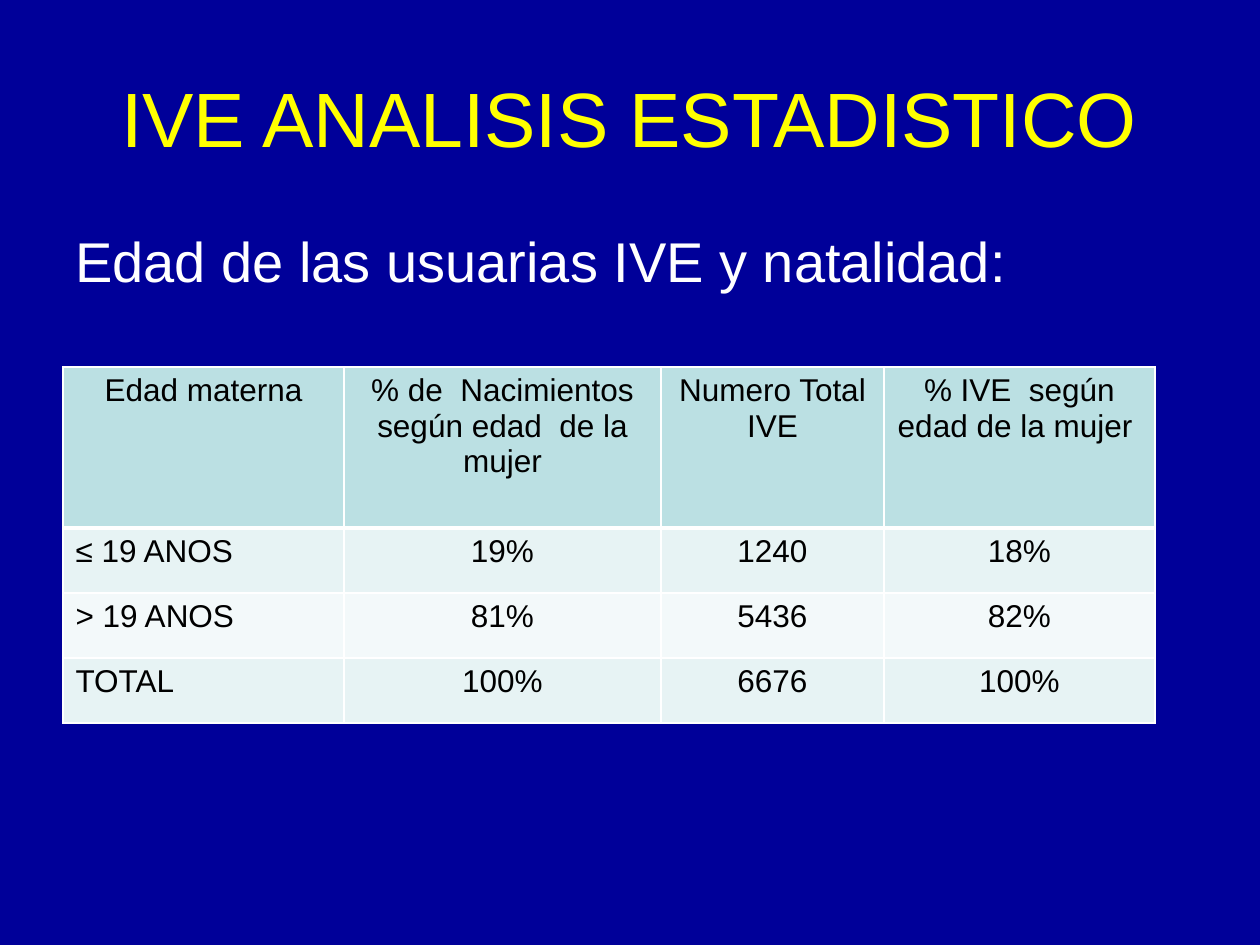
from dataclasses import dataclass

from pptx import Presentation
from pptx.dml.color import RGBColor
from pptx.enum.text import MSO_ANCHOR, PP_ALIGN
from pptx.oxml.ns import qn
from pptx.util import Emu, Pt
from lxml.etree import SubElement

EMU_PER_PX = 914400 / 126
TITLE_ONLY = 5


def px(length):
    return Emu(round(length * EMU_PER_PX))


@dataclass(frozen=True)
class Theme:
    font: str = "Arial"
    background: str = "000099"
    title: str = "FFFF00"
    subtitle: str = "FFFFFF"
    cell_text: str = "000000"
    border: str = "FFFFFF"
    header_fill: str = "BBE0E3"
    row_fills: tuple = ("E7F3F4", "F3F9FA")
    title_size: int = 44
    subtitle_size: int = 32
    cell_size: int = 18


class SlideBuilder:
    def __init__(self, presentation, theme):
        self.theme = theme
        self.slide = presentation.slides.add_slide(presentation.slide_layouts[TITLE_ONLY])
        background = self.slide.background.fill
        background.solid()
        background.fore_color.rgb = RGBColor.from_string(theme.background)

    def set_text(self, frame, text, size, color, align=PP_ALIGN.LEFT):
        frame.text = text
        frame.word_wrap = True
        for paragraph in frame.paragraphs:
            paragraph.alignment = align
            for run in paragraph.runs:
                run.font.name = self.theme.font
                run.font.size = Pt(size)
                run.font.bold = False
                run.font.color.rgb = RGBColor.from_string(color)

    def title(self, text, left, top, width, height):
        heading = self.slide.shapes.title
        heading.left, heading.top = px(left), px(top)
        heading.width, heading.height = px(width), px(height)
        self.set_text(heading.text_frame, text, self.theme.title_size,
                      self.theme.title, PP_ALIGN.CENTER)
        heading.text_frame.vertical_anchor = MSO_ANCHOR.MIDDLE

    def subtitle(self, text, left, top, width, height, hanging):
        box = self.slide.shapes.add_textbox(px(left), px(top), px(width), px(height))
        self.set_text(box.text_frame, text, self.theme.subtitle_size, self.theme.subtitle)
        properties = box.text_frame.paragraphs[0]._p.get_or_add_pPr()
        properties.set("marL", str(px(hanging)))
        properties.set("indent", str(-px(hanging)))
        spacing = SubElement(properties, qn("a:spcBef"))
        SubElement(spacing, qn("a:spcPct"), val="20000")

    def border(self, cell, bottom_width):
        properties = cell._tc.get_or_add_tcPr()
        for side, width in (("L", 1), ("R", 1), ("T", 1), ("B", bottom_width)):
            line = SubElement(properties, qn(f"a:ln{side}"), w=str(Pt(width)))
            fill = SubElement(line, qn("a:solidFill"))
            SubElement(fill, qn("a:srgbClr"), val=self.theme.border)

    def table(self, rows, left, top, column_widths, row_heights):
        """Draw a header row over banded rows whose first column is left-aligned."""
        theme = self.theme
        grid = self.slide.shapes.add_table(
            len(rows), len(column_widths), px(left), px(top),
            px(sum(column_widths)), px(sum(row_heights))).table
        for column, width in zip(grid.columns, column_widths):
            column.width = px(width)
        for row, height in zip(grid.rows, row_heights):
            row.height = px(height)
        for r, values in enumerate(rows):
            is_header = r == 0
            fill = theme.header_fill if is_header else theme.row_fills[(r - 1) % 2]
            for c, value in enumerate(values):
                cell = grid.cell(r, c)
                align = PP_ALIGN.CENTER if is_header or c else PP_ALIGN.LEFT
                self.set_text(cell.text_frame, value, theme.cell_size, theme.cell_text, align)
                self.border(cell, 3 if is_header else 1)
                cell.fill.solid()
                cell.fill.fore_color.rgb = RGBColor.from_string(fill)


def main():
    presentation = Presentation()
    presentation.slide_width, presentation.slide_height = px(1260), px(945)
    builder = SlideBuilder(presentation, Theme())
    builder.title("IVE ANALISIS ESTADISTICO", 63, 38, 1134, 157)
    builder.subtitle("Edad de las usuarias IVE y natalidad:", 63, 220, 1134, 116, hanging=48)
    age_rows = [
        ("Edad materna", "% de  Nacimientos según edad  de la mujer",
         "Numero Total IVE", "% IVE  según edad de la mujer "),
        ("≤ 19 ANOS", "19%", "1240", "18%"),
        ("> 19 ANOS", "81%", "5436", "82%"),
        ("TOTAL", "100%", "6676", "100%"),
    ]
    builder.table(age_rows, 63, 367, (281, 317, 223, 271), (161, 65, 65, 65))
    presentation.save("out.pptx")


if __name__ == "__main__":
    main()
